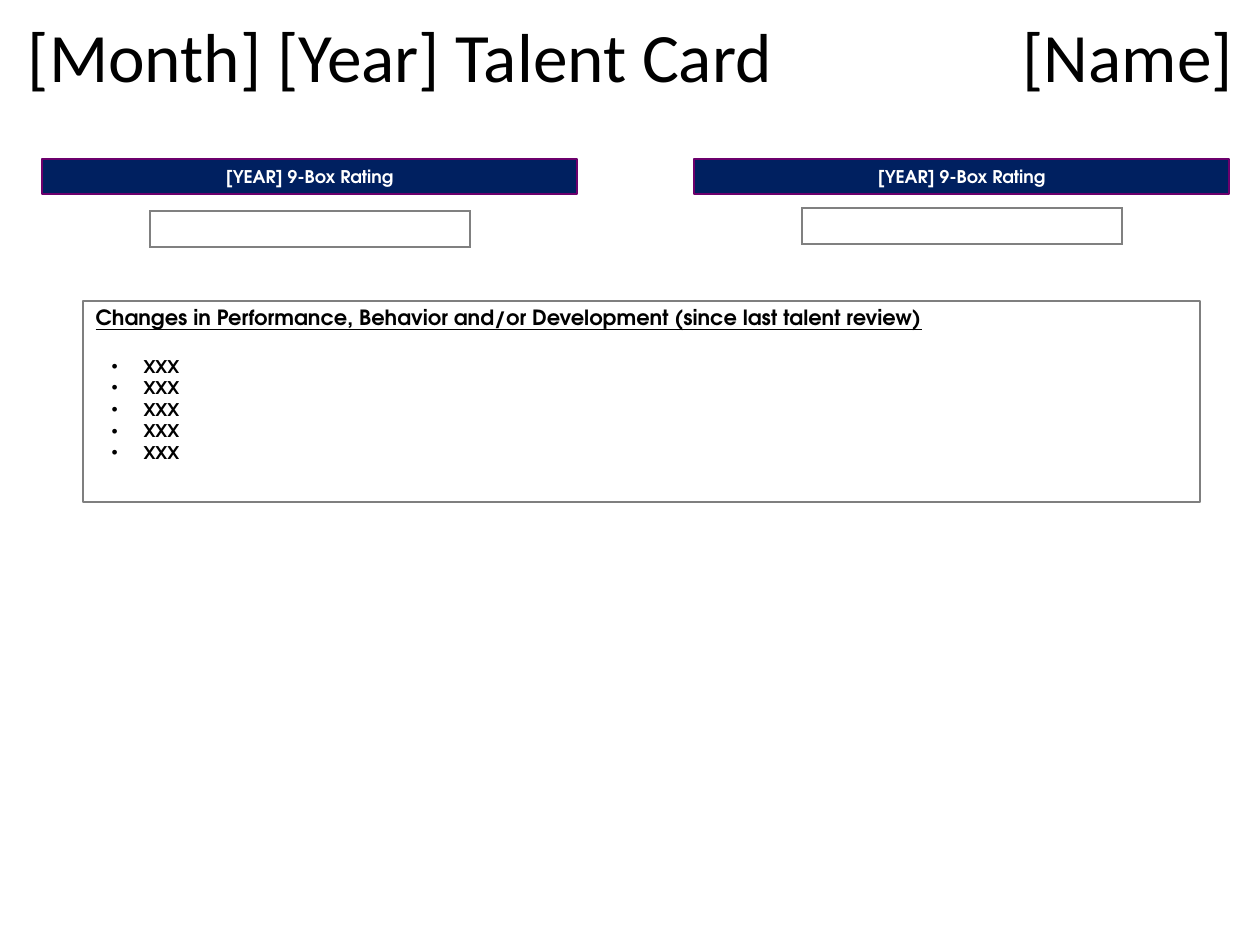
from lxml import etree
from pptx import Presentation
from pptx.dml.color import RGBColor
from pptx.enum.shapes import MSO_SHAPE
from pptx.enum.text import MSO_ANCHOR, MSO_AUTO_SIZE, PP_ALIGN
from pptx.oxml.ns import qn
from pptx.util import Emu, Pt

RECTANGLE = MSO_SHAPE.RECTANGLE
MIDDLE, TOP = MSO_ANCHOR.MIDDLE, MSO_ANCHOR.TOP
NO_AUTOFIT = MSO_AUTO_SIZE.NONE
LEFT, CENTER = PP_ALIGN.LEFT, PP_ALIGN.CENTER
EMU_PER_PX = 914400 / 126
COLORS = {"text": "000000", "bar": "002060", "bar_line": "6C006C",
          "bar_text": "FFFFFF", "frame": "7F7F7F", "cell_line": "808080"}


def px(length):
    return Emu(round(length * EMU_PER_PX))


def rgb(name):
    return RGBColor.from_string(COLORS[name])


def add_xml(parent, tag, **attributes):
    return etree.SubElement(parent, qn(tag), {k: str(v) for k, v in attributes.items()})


class TalentCard:
    title_font = "Calibri"
    body_font = "TeX Gyre Adventor"

    def __init__(self, slide):
        self.slide = slide

    def place(self, shape, left, top, width, height):
        shape.left, shape.top = px(left), px(top)
        shape.width, shape.height = px(width), px(height)

    def style(self, paragraph, size, color="text", face=body_font, bold=True):
        font = paragraph.font
        font.name, font.size, font.bold = face, Pt(size), bold
        font.color.rgb = rgb(color)

    def title(self, text, box, inset, tab):
        """Title whose tabbed part ends at a right-aligned tab stop."""
        title = self.slide.shapes.title
        self.place(title, *box)
        frame = title.text_frame
        frame.auto_size, frame.vertical_anchor = NO_AUTOFIT, MIDDLE
        frame.margin_left = px(inset)
        frame.text = text
        paragraph = frame.paragraphs[0]
        paragraph.alignment, paragraph.line_spacing = LEFT, 0.9
        tabs = add_xml(paragraph._p.get_or_add_pPr(), "a:tabLst")
        add_xml(tabs, "a:tab", pos=px(tab), algn="r")
        self.style(paragraph, 39.6, face=self.title_font, bold=False)

    def bar(self, text, *box):
        bar = self.slide.shapes.add_shape(RECTANGLE, *map(px, box))
        bar.shadow.inherit = False
        bar.fill.solid()
        bar.fill.fore_color.rgb = rgb("bar")
        bar.line.color.rgb = rgb("bar_line")
        bar.line.width = Pt(0.75)
        bar.text_frame.text = text
        paragraph = bar.text_frame.paragraphs[0]
        paragraph.alignment = CENTER
        self.style(paragraph, 10, "bar_text")

    def rating_table(self, *box):
        """Empty one-cell table with a thin border."""
        table = self.slide.shapes.add_table(1, 1, *map(px, box)).table
        cell = table.cell(0, 0)
        add_xml(cell.text_frame.paragraphs[0]._p, "a:endParaRPr", sz=1000)
        properties = cell._tc.get_or_add_tcPr()
        for side in ("a:lnL", "a:lnR", "a:lnT", "a:lnB"):
            line = add_xml(properties, side, w=Pt(1))
            add_xml(add_xml(line, "a:solidFill"), "a:srgbClr", val=COLORS["cell_line"])
        cell.fill.background()

    def changes(self, heading, items, *box):
        """Framed body with an underlined heading above a bulleted list."""
        body = self.slide.placeholders[1]
        self.place(body, *box)
        body.line.color.rgb = rgb("frame")
        body.line.width = Pt(1)
        frame = body.text_frame
        frame.auto_size, frame.vertical_anchor = NO_AUTOFIT, TOP
        frame.text = "\n".join([heading, *items])
        for index, paragraph in enumerate(frame.paragraphs):
            properties = paragraph._p.get_or_add_pPr()
            paragraph.line_spacing = 0.9
            if index == 0:
                properties.set("marL", "0")
                properties.set("indent", "0")
                paragraph.space_before = Pt(0)
                add_xml(properties, "a:buNone")
                self.style(paragraph, 12)
                paragraph.font.underline = True
            else:
                properties.set("marL", str(px(48)))
                properties.set("indent", str(px(-32)))
                paragraph.space_before = Pt(16 if index == 1 else 1.5)
                add_xml(properties, "a:buChar", char="•")
                self.style(paragraph, 10)


def main():
    presentation = Presentation()
    presentation.slide_width, presentation.slide_height = px(1260), px(945)
    layout = presentation.slide_layouts[1]
    card = TalentCard(presentation.slides.add_slide(layout))

    card.changes("Changes in Performance, Behavior and/or Development (since last talent review)",
                 ["XXX"] * 5, 83, 301, 1117, 201)
    card.title("[Month] [Year] Talent Card\t[Name]", (0, -2, 1260, 125), inset=28, tab=1205)
    for left, table_top in ((42, 211), (694, 208)):
        card.bar("[YEAR] 9-Box Rating", left, 159, 535, 35)
        card.rating_table(left + 108, table_top, 320, 36)
    presentation.save("out.pptx")


if __name__ == "__main__":
    main()
